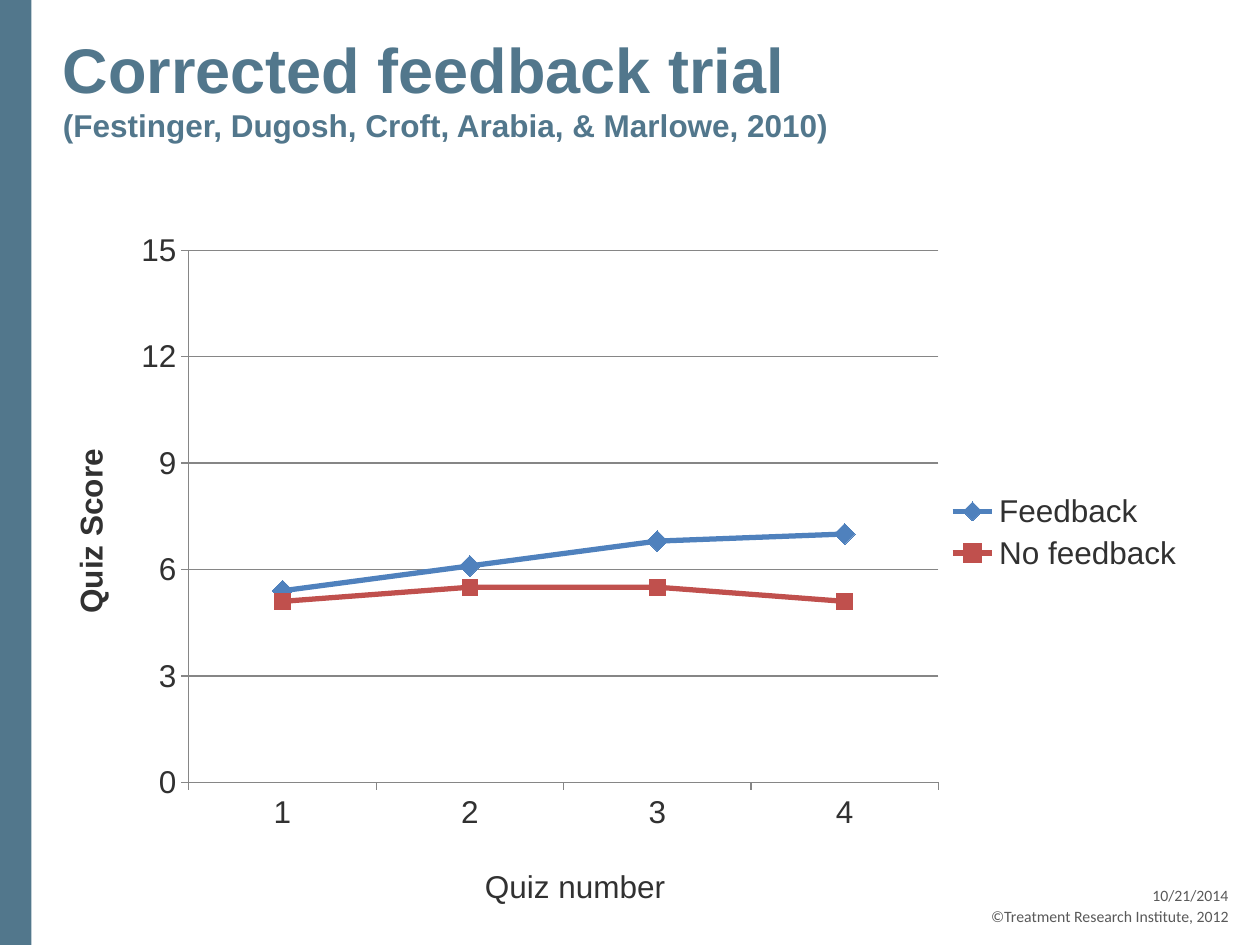
from lxml import etree
from pptx import Presentation
from pptx.chart.data import CategoryChartData
from pptx.dml.color import RGBColor
from pptx.enum.chart import XL_CHART_TYPE, XL_LEGEND_POSITION, XL_MARKER_STYLE, XL_TICK_MARK
from pptx.enum.shapes import MSO_SHAPE
from pptx.enum.text import MSO_ANCHOR, PP_ALIGN
from pptx.oxml.ns import qn
from pptx.util import Inches, Pt

RECT = MSO_SHAPE.RECTANGLE
LEFT, RIGHT = PP_ALIGN.LEFT, PP_ALIGN.RIGHT
TOP, MIDDLE = MSO_ANCHOR.TOP, MSO_ANCHOR.MIDDLE
DIAMOND, SQUARE = XL_MARKER_STYLE.DIAMOND, XL_MARKER_STYLE.SQUARE
OUTSIDE = XL_TICK_MARK.OUTSIDE

TITLE = "Corrected feedback trial"
CITATION = "(Festinger, Dugosh, Croft, Arabia, & Marlowe, 2010)"
FOOTER = ["10/21/2014", "©Treatment Research Institute, 2012"]
X_TITLE, Y_TITLE = "Quiz number", "Quiz Score"
QUIZZES = ["1", "2", "3", "4"]
SERIES = [
    ("Feedback", [5.4, 6.1, 6.8, 7], "4F81BD", DIAMOND, 12),
    ("No feedback", [5.1, 5.5, 5.5, 5.1], "C0504D", SQUARE, 9),
]
PLOT = {"x": 0.111, "y": 0.048, "w": 0.661, "h": 0.853}

THEME = {
    "font": "Arial", "footer_font": "Calibri",
    "accent": "52778C", "text": "313131", "muted": "595959", "grid": "868686",
    "title": 36, "body": 18, "footer": 9,
}
W, H = 10, 7.5
MARGIN = W / 20
CONTENT_W = W - 2 * MARGIN


def color(name):
    return RGBColor.from_string(THEME.get(name, name))


def set_font(font, size, ink, face="font", bold=False):
    font.name, font.size, font.bold = THEME[face], Pt(THEME[size]), bold
    font.color.rgb = color(ink)


def add_text(slide, box, lines, align=LEFT, anchor=TOP, insets=(0.1, 0.05, 0.1, 0.05)):
    tf = slide.shapes.add_textbox(*map(Inches, box)).text_frame
    tf.word_wrap, tf.vertical_anchor = True, anchor
    tf.margin_left, tf.margin_top, tf.margin_right, tf.margin_bottom = map(Inches, insets)
    p = tf.paragraphs[0]
    p.alignment = align
    for i, (text, style) in enumerate(lines):
        if i:
            p.add_line_break()
        r = p.add_run()
        r.text = text
        set_font(r.font, **style)


def set_line(line, ink, width):
    line.color.rgb, line.width = color(ink), Pt(width)


def set_plot_layout(chart):
    area = chart._chartSpace.chart.plotArea
    for old in area.findall(qn("c:layout")):
        area.remove(old)
    layout = etree.Element(qn("c:layout"))
    area.insert(0, layout)
    manual = etree.SubElement(layout, qn("c:manualLayout"))
    values = {"layoutTarget": "inner", "xMode": "edge", "yMode": "edge", **PLOT}
    for tag, value in values.items():
        etree.SubElement(manual, qn(f"c:{tag}")).set("val", str(value))


def add_line_chart(slide, box):
    data = CategoryChartData()
    data.categories = QUIZZES
    for name, values, *_ in SERIES:
        data.add_series(name, values)
    frame = slide.shapes.add_chart(XL_CHART_TYPE.LINE_MARKERS, *map(Inches, box), data)
    chart = frame.chart
    chart.has_title = False
    set_font(chart.font, "body", "text")
    chart.has_legend = True
    chart.legend.position = XL_LEGEND_POSITION.RIGHT
    chart.legend.include_in_layout = False
    chart.plots[0].vary_by_categories = False

    for s, (_, _, ink, marker, size) in zip(chart.plots[0].series, SERIES):
        s.smooth = False
        set_line(s.format.line, ink, 3)
        s.marker.style, s.marker.size = marker, size
        s.marker.format.fill.solid()
        s.marker.format.fill.fore_color.rgb = color(ink)
        set_line(s.marker.format.line, ink, 0.75)

    axis = chart.value_axis
    for ax in (chart.category_axis, axis):
        ax.major_tick_mark = OUTSIDE
        set_line(ax.format.line, "grid", 0.75)
    axis.minimum_scale, axis.maximum_scale, axis.major_unit = 0, 15, 3
    axis.has_major_gridlines = True
    set_line(axis.major_gridlines.format.line, "grid", 0.75)
    r = axis.axis_title.text_frame.paragraphs[0].add_run()
    r.text = Y_TITLE
    set_font(r.font, "body", "text", bold=True)
    set_plot_layout(chart)


def main():
    prs = Presentation()
    prs.slide_width, prs.slide_height = Inches(W), Inches(H)
    slide = prs.slides.add_slide(prs.slide_layouts[6])

    bar = slide.shapes.add_shape(RECT, 0, 0, Inches(MARGIN / 2), Inches(H))
    bar.shadow.inherit = False
    bar.fill.solid()
    bar.fill.fore_color.rgb = color("accent")
    bar.line.fill.background()

    heading = [
        (text, {"size": size, "ink": "accent", "bold": True})
        for text, size in ((TITLE, "title"), (CITATION, "body"))
    ]
    add_text(slide, (MARGIN, 0.3, CONTENT_W, 0.78), heading,
             anchor=MIDDLE, insets=(0, 0.05, 0.1, 0.05))
    add_line_chart(slide, (MARGIN, 1.75, CONTENT_W, 4.95))
    add_text(slide, (3.75, 6.83, 1.75, 0.4), [(X_TITLE, {"size": "body", "ink": "text"})])

    footer_style = {"size": "footer", "ink": "muted", "face": "footer_font"}
    for row, text in enumerate(FOOTER):
        add_text(slide, (6.58, 7.03 + row * 0.17, 3.17, 0.22), [(text, footer_style)],
                 align=RIGHT, insets=(0, 0, 0, 0))

    prs.save("out.pptx")


if __name__ == "__main__":
    main()
